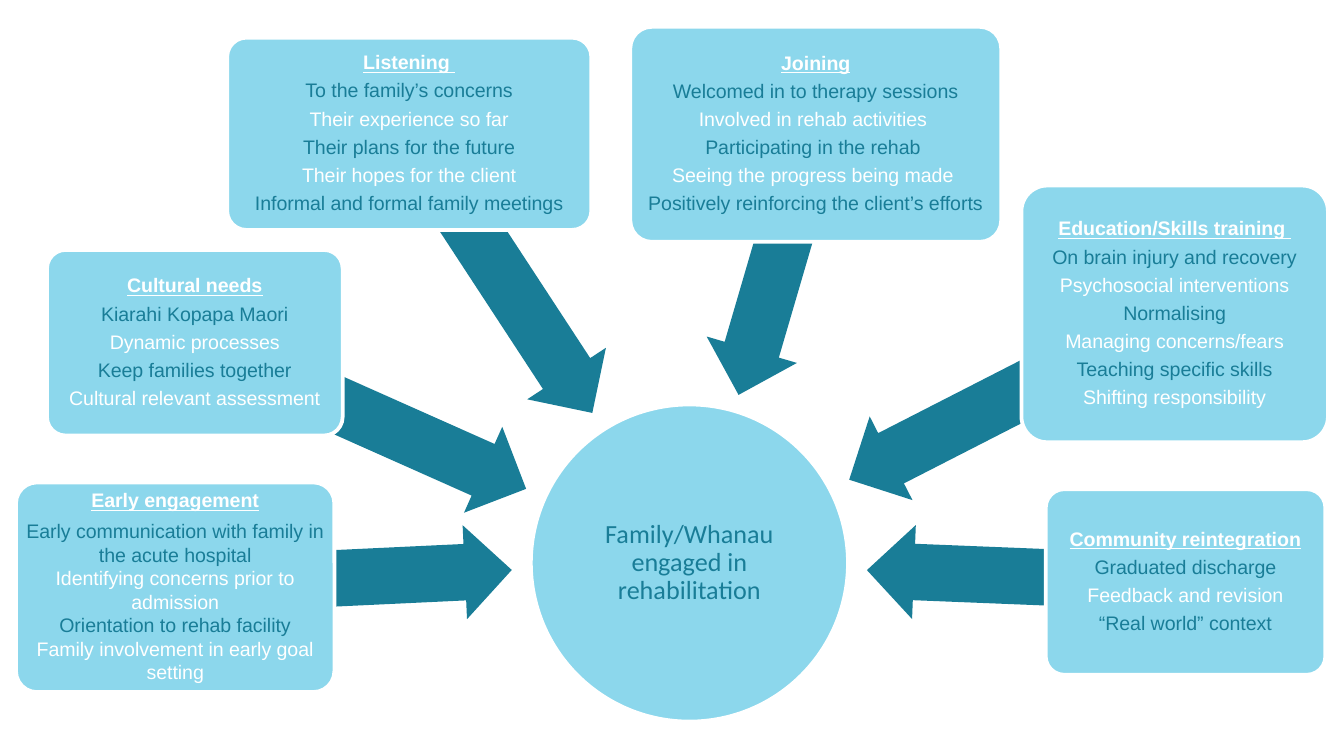
from pptx import Presentation
from pptx.dml.color import RGBColor
from pptx.enum import shapes, text
from pptx.util import Pt

COLORS = {"sky": "8CD7EC", "teal": "197D97", "white": "FFFFFF"}
ARROW_HEIGHT = 50.4
HUB = (284.4, 216.7, 169.9, 169.9)

# Boxes are left, top, width, height; arrows are left, top, length, rotation.
STRATEGIES = [
    {"title": "Early engagement",
     "box": (8.6, 258.5, 170.6, 112.3), "arrow": (93.6, 284.4, 180.7, 177.3),
     "tight": True,
     "items": ["Early communication with family in the acute hospital",
               "Identifying concerns prior to admission",
               "Orientation to rehab facility",
               "Family involvement in early goal setting"]},
    {"title": "Cultural needs",
     "box": (25.2, 133.9, 158.4, 99.4), "arrow": (96.5, 197.3, 193.7, 204),
     "items": ["Kiarahi Kopapa Maori", "Dynamic processes",
               "Keep families together", "Cultural relevant assessment"]},
    {"title": "Listening ",
     "box": (121.7, 20.2, 195.1, 103), "arrow": (178.6, 121, 179.3, 236.8),
     "items": ["To the family’s concerns", "Their experience so far",
               "Their plans for the future", "Their hopes for the client",
               "Informal and formal family meetings"]},
    {"title": "Joining",
     "box": (337.7, 14.4, 198.7, 115.2), "arrow": (343.4, 116.6, 145.4, 286.3),
     "items": ["Welcomed in to therapy sessions", "Involved in rehab activities ",
               "Participating in the rehab ", "Seeing the progress being made ",
               "Positively reinforcing the client’s efforts"]},
    {"title": "Education/Skills training ",
     "box": (547.2, 99.4, 164.2, 137.5), "arrow": (444.2, 187.2, 195.8, 332.9),
     "items": ["On brain injury and recovery", "Psychosocial interventions",
               "Normalising", "Managing concerns/fears",
               "Teaching specific skills", "Shifting responsibility"]},
    {"title": "Community reintegration",
     "box": (560.2, 262.1, 149.8, 99.4), "arrow": (464.4, 283.7, 170.6, 2.3),
     "items": ["Graduated discharge", "Feedback and revision",
               "“Real world” context"]},
]


def color(name):
    return RGBColor.from_string(COLORS[name])


def add_solid(page, kind, box, fill, outline=None):
    shape = page.shapes.add_shape(kind, *map(Pt, box))
    shape.shadow.inherit = False
    shape.fill.solid()
    shape.fill.fore_color.rgb = color(fill)
    if outline:
        shape.line.color.rgb = color(outline)
        shape.line.width = Pt(2)
    else:
        shape.line.fill.background()
    return shape


def add_label(page, box, inset, margin):
    """Add a middle-anchored text frame set in from the given box."""
    left, top, width, height = box
    frame = page.shapes.add_textbox(
        Pt(left + inset), Pt(top + inset),
        Pt(width - 2 * inset), Pt(height - 2 * inset)).text_frame
    frame.word_wrap = True
    frame.vertical_anchor = text.MSO_ANCHOR.MIDDLE
    frame.margin_left = frame.margin_right = Pt(margin)
    frame.margin_top = frame.margin_bottom = Pt(margin)
    return frame


def write(para, words, font, size, tint, spacing=0.9, after=0.35):
    """Fill a centred paragraph; after is a share of the text size."""
    para.text = words
    para.alignment = text.PP_ALIGN.CENTER
    para.line_spacing = spacing
    para.space_after = Pt(round(size * after, 1))
    para.font.name = font
    para.font.size = Pt(size)
    para.font.color.rgb = color(tint)


def add_hub(page):
    add_solid(page, shapes.MSO_SHAPE.OVAL, HUB, "sky", "white")
    frame = add_label(page, HUB, 25, 0.9)
    write(frame.paragraphs[0], "Family/Whanau engaged in rehabilitation",
          "Calibri", 14, "teal")


def add_arrow(page, left, top, length, rotation):
    arrow = add_solid(page, shapes.MSO_SHAPE.LEFT_ARROW,
                      (left, top, length, ARROW_HEIGHT), "teal")
    arrow.adjustments[0] = 0.6
    arrow.adjustments[1] = 0.5
    arrow.rotation = rotation


def add_card(page, box, title, items, tight=False):
    card = add_solid(page, shapes.MSO_SHAPE.ROUNDED_RECTANGLE, box,
                     "sky", "white")
    card.adjustments[0] = 0.1
    frame = add_label(page, box, 3, 1.5)
    heading = frame.paragraphs[0]
    write(heading, title, "Arial", 10.5, "white")
    heading.font.bold = heading.font.underline = True
    spacing, after = (1.0, 0) if tight else (0.9, 0.35)
    for index, item in enumerate(items):
        tint = "white" if index % 2 else "teal"
        write(frame.add_paragraph(), item, "Arial", 10.5, tint, spacing, after)


def main():
    deck = Presentation()
    deck.slide_width, deck.slide_height = Pt(720), Pt(405)
    page = deck.slides.add_slide(deck.slide_layouts[6])
    add_hub(page)
    for strategy in STRATEGIES:
        add_arrow(page, *strategy["arrow"])
        add_card(page, strategy["box"], strategy["title"], strategy["items"],
                 strategy.get("tight", False))
    deck.save("out.pptx")


if __name__ == "__main__":
    main()
